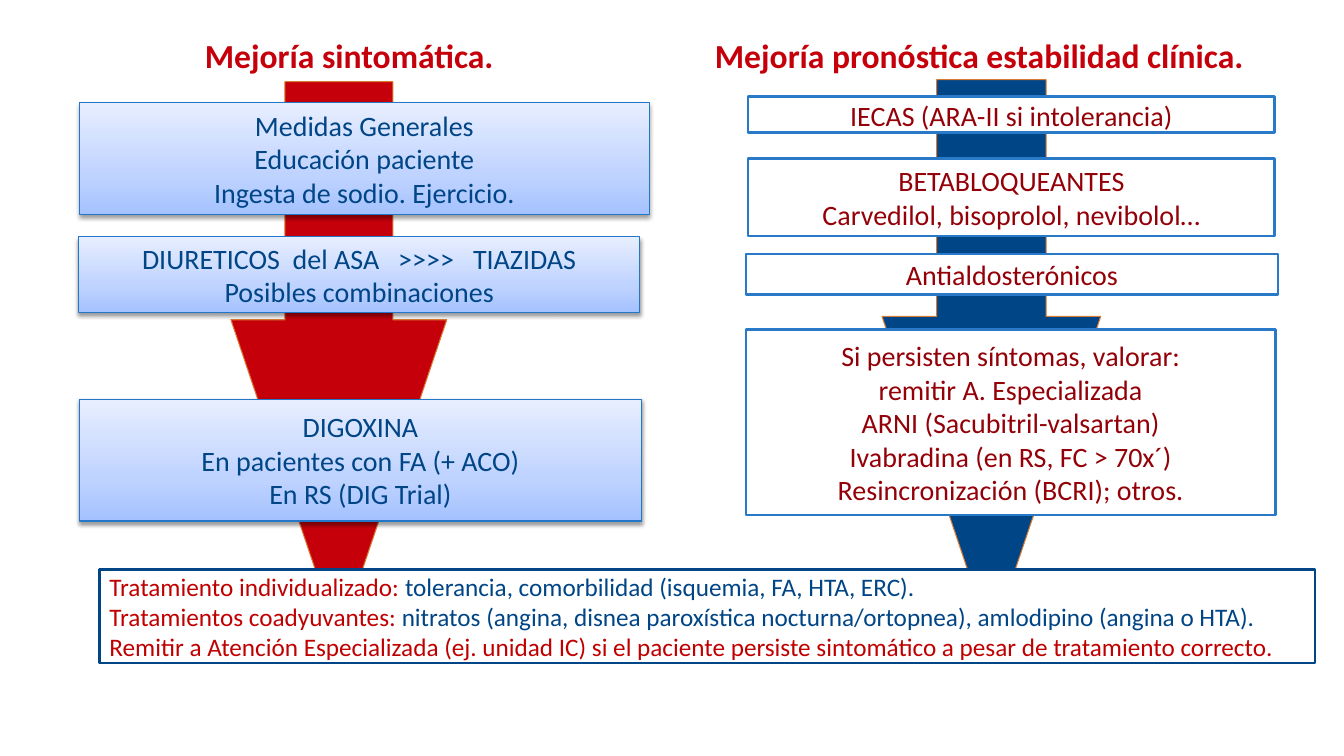
from lxml.etree import SubElement
from pptx import Presentation
from pptx.dml.color import RGBColor
from pptx.enum.shapes import MSO_SHAPE as Kind
from pptx.enum.text import MSO_ANCHOR as Anchor, PP_ALIGN as Align
from pptx.oxml import parse_xml
from pptx.oxml.ns import qn
from pptx.util import Cm, Pt

WHITE = RGBColor(0xFF, 0xFF, 0xFF)
NAVY = RGBColor(0x00, 0x45, 0x86)
RED = RGBColor(0xC5, 0x00, 0x0B)
BRICK = RGBColor(0xC0, 0x00, 0x00)
WINE = RGBColor(0x94, 0x00, 0x08)
AZURE = RGBColor(0x28, 0x7A, 0xC8)
EDGE = RGBColor(0x23, 0x77, 0xC8)
ORANGE = RGBColor(0xD9, 0x7A, 0x33)
STOPS = [(0, "A4C2FF"), (35, "BFD3FF"), (100, "E7EEFF")]

deck = Presentation()
deck.slide_width, deck.slide_height = Cm(33.87), Cm(19.05)
slide = deck.slides.add_slide(deck.slide_layouts[6])


def add_box(kind, place, fill, line, width):
    shape = slide.shapes.add_shape(kind, *map(Cm, place))
    shape.shadow.inherit = False
    shape.fill.solid()
    shape.fill.fore_color.rgb = fill
    shape.line.color.rgb = line
    shape.line.width = Pt(width)
    return shape


def write(shape, rows, size, align, anchor=Anchor.MIDDLE, bold=False):
    """Fill a shape with rows, each a list of (text, colour) runs."""
    frame = shape.text_frame
    frame.word_wrap = True
    frame.vertical_anchor = anchor
    frame.text = "\n".join("" for row in rows)
    for para, row in zip(frame.paragraphs, rows):
        para.alignment = align
        for text, color in row:
            run = para.add_run()
            run.text = text
            run.font.name = "Calibri"
            run.font.size = Pt(size)
            run.font.bold = bold
            run.font.color.rgb = color


# Arrows behind the two columns
for place, color, head in [
    ((22.23, 2.01, 5.51, 14.12), NAVY, 1.48),
    ((5.82, 2.06, 5.44, 14.05), RED, 1.48),
]:
    arrow = add_box(Kind.DOWN_ARROW, place, color, ORANGE, 0.75)
    arrow.adjustments[0] = 0.5
    arrow.adjustments[1] = head

# Prognosis steps
for place, lines in [
    ((18.85, 2.44, 13.28, 0.91), ["IECAS (ARA-II si intolerancia)"]),
    ((18.85, 3.99, 13.28, 1.96),
     ["BETABLOQUEANTES", "Carvedilol, bisoprolol, nevibolol…"]),
    ((18.8, 6.4, 13.41, 1.02), ["Antialdosterónicos"]),
    ((18.8, 8.31, 13.34, 4.67),
     ["Si persisten síntomas, valorar:", "remitir A. Especializada",
      "ARNI (Sacubitril-valsartan)", "Ivabradina (en RS, FC > 70x´)",
      "Resincronización (BCRI); otros."]),
]:
    step = add_box(Kind.RECTANGLE, place, WHITE, AZURE, 2)
    write(step, [[(text, WINE)] for text in lines], 20, Align.CENTER)

# Symptom steps, with gradient and soft shadow
NS = 'xmlns:a="http://schemas.openxmlformats.org/drawingml/2006/main"'
SHADE = (f'<a:outerShdw {NS} blurRad="{Pt(3.1)}" dist="{Pt(1.6)}" dir="5400000" '
         'rotWithShape="0"><a:srgbClr val="000000"><a:alpha val="38000"/>'
         '</a:srgbClr></a:outerShdw>')
for place, lines in [
    ((2.01, 2.59, 14.35, 2.82),
     ["Medidas Generales", "Educación paciente", "Ingesta de sodio. Ejercicio."]),
    ((1.98, 5.97, 14.15, 1.91),
     ["DIURETICOS  del ASA   >>>>   TIAZIDAS", "Posibles combinaciones"]),
    ((2.01, 10.06, 14.15, 3.07),
     ["DIGOXINA", "En pacientes con FA (+ ACO)", "En RS (DIG Trial)"]),
]:
    step = add_box(Kind.RECTANGLE, place, WHITE, EDGE, 0.75)
    step.fill.gradient()
    step.fill.gradient_angle = 90
    props = step._element.spPr
    stops = props.find(".//" + qn("a:gsLst"))
    for old in list(stops):
        stops.remove(old)
    for spot, color in STOPS:
        stop = SubElement(stops, qn("a:gs"), pos=str(spot * 1000))
        SubElement(stop, qn("a:srgbClr"), val=color)
    props.find(qn("a:effectLst")).append(parse_xml(SHADE))
    write(step, [[(text, NAVY)] for text in lines], 20, Align.CENTER)

# Closing advice
advice = add_box(Kind.RECTANGLE, (2.51, 14.35, 30.63, 2.36), WHITE, NAVY, 2)
write(advice, [
    [("Tratamiento individualizado: ", BRICK),
     ("tolerancia, comorbilidad (isquemia, FA, HTA, ERC).", NAVY)],
    [("Tratamientos coadyuvantes: ", BRICK),
     ("nitratos (angina, disnea paroxística nocturna/ortopnea), "
      "amlodipino (angina o HTA).", NAVY)],
    [("Remitir a Atención Especializada (ej. unidad IC) si el paciente persiste "
      "sintomático a pesar de tratamiento correcto.", BRICK)],
], 18, Align.LEFT)

# Column titles
for left, text in [(1.32, "Mejoría sintomática."),
                   (17.2, "Mejoría pronóstica estabilidad clínica.")]:
    title = slide.shapes.add_textbox(Cm(left), Cm(0.5), Cm(14.96), Cm(1.53))
    write(title, [[(text, RED)]], 24, Align.CENTER, Anchor.BOTTOM, True)

deck.save("out.pptx")
